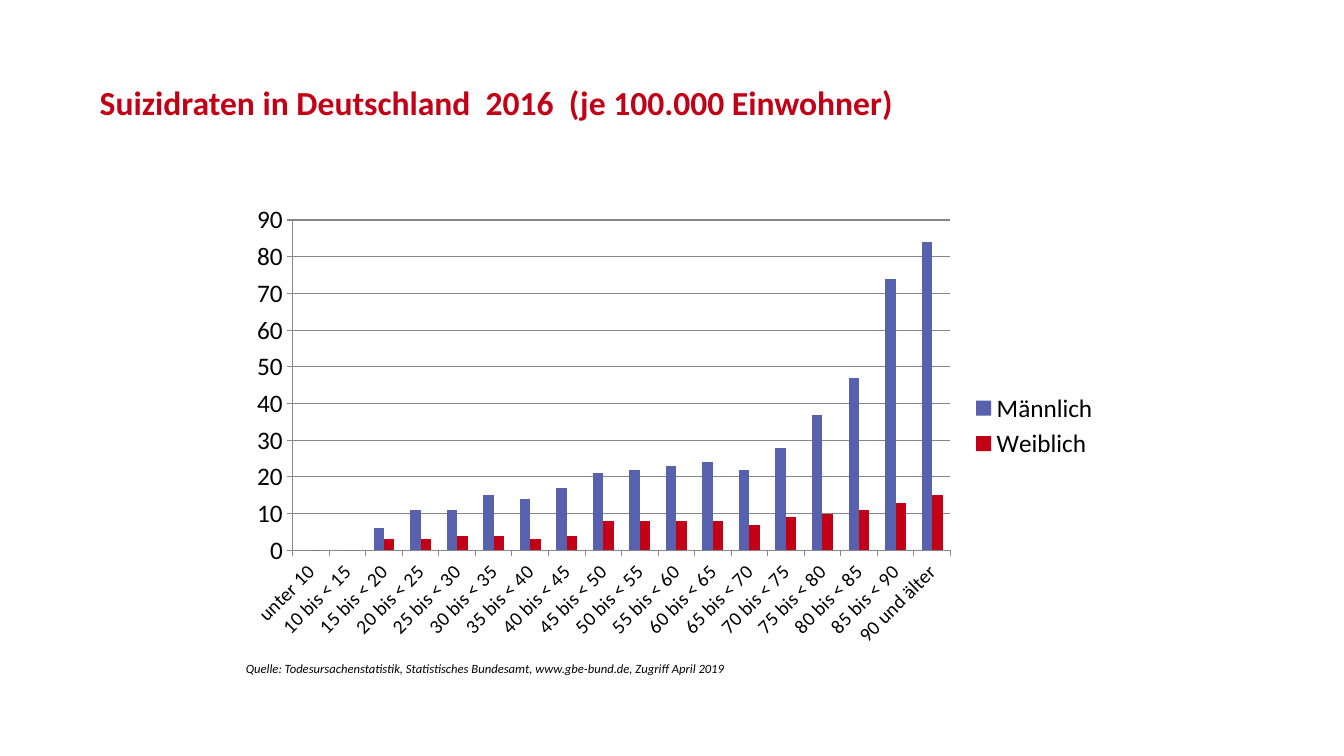
from pptx import Presentation, util as u
from pptx.chart import data
from pptx.dml.color import RGBColor
from pptx.enum import chart as charts, text

PX = 9144
RED = RGBColor(0xC2, 0x00, 0x16)
BLUE = RGBColor(0x57, 0x61, 0xAD)
BLACK = RGBColor(0x00, 0x00, 0x00)
GRAY = RGBColor(0x87, 0x87, 0x87)
FONT = "Calibri"

presentation = Presentation()
presentation.slide_width = u.Emu(1333 * PX)
presentation.slide_height = u.Emu(750 * PX)
slide = presentation.slides.add_slide(presentation.slide_layouts[6])

texts = [
    ("Suizidraten in Deutschland  2016  (je 100.000 Einwohner)",
     (89, 61, 976, 86), RED, 0.9, {"size": u.Pt(24), "bold": True}),
    ("Quelle: Todesursachenstatistik, Statistisches Bundesamt, "
     "www.gbe-bund.de, Zugriff April 2019",
     (234, 651, 866, 25), BLACK, 1.0, {"size": u.Pt(9), "italic": True}),
]
for wording, box, color, spacing, font_format in texts:
    shape = slide.shapes.add_textbox(*(u.Emu(length * PX) for length in box))
    frame = shape.text_frame
    frame.word_wrap = True
    frame.vertical_anchor = text.MSO_ANCHOR.MIDDLE
    paragraph = frame.paragraphs[0]
    paragraph.line_spacing = spacing
    run = paragraph.add_run()
    run.text = wording
    run.font.name = FONT
    run.font.color.rgb = color
    for name, value in font_format.items():
        setattr(run.font, name, value)

rates = data.CategoryChartData()
rates.categories = (
    ["unter 10"]
    + [f"{age} bis < {age + 5}" for age in range(10, 90, 5)]
    + ["90 und älter"]
)
rates.add_series("Männlich", [0, 0, 6, 11, 11, 15, 14, 17, 21,
                              22, 23, 24, 22, 28, 37, 47, 74, 84])
rates.add_series("Weiblich", [0, 0, 3, 3, 4, 4, 3, 4, 8,
                              8, 8, 8, 7, 9, 10, 11, 13, 15])
chart_box = (u.Emu(length * PX) for length in (234, 194, 866, 457))
chart = slide.shapes.add_chart(
    charts.XL_CHART_TYPE.COLUMN_CLUSTERED, *chart_box, rates).chart
chart.has_title = False
chart.font.name = FONT
chart.font.size = u.Pt(18)
chart.font.color.rgb = BLACK
chart.has_legend = True
chart.legend.position = charts.XL_LEGEND_POSITION.RIGHT
chart.legend.include_in_layout = False

plot = chart.plots[0]
plot.gap_width = 150
plot.overlap = 0
plot.vary_by_categories = False
for series, color in zip(plot.series, (BLUE, RED)):
    series.format.fill.solid()
    series.format.fill.fore_color.rgb = color

ages, scale = chart.category_axis, chart.value_axis
for name, value in {"minimum_scale": 0, "maximum_scale": 90, "major_unit": 10,
                    "has_major_gridlines": True}.items():
    setattr(scale, name, value)
for axis in (ages, scale):
    axis.major_tick_mark = charts.XL_TICK_MARK.OUTSIDE
for part in (ages, scale, scale.major_gridlines):
    part.format.line.color.rgb = GRAY
    part.format.line.width = u.Pt(0.75)
ages.tick_labels.font.size = u.Pt(14)
ages.tick_labels.font.name = FONT
ages.tick_labels.font.color.rgb = BLACK
ages._element.txPr.bodyPr.set("rot", "-2700000")

presentation.save("out.pptx")
